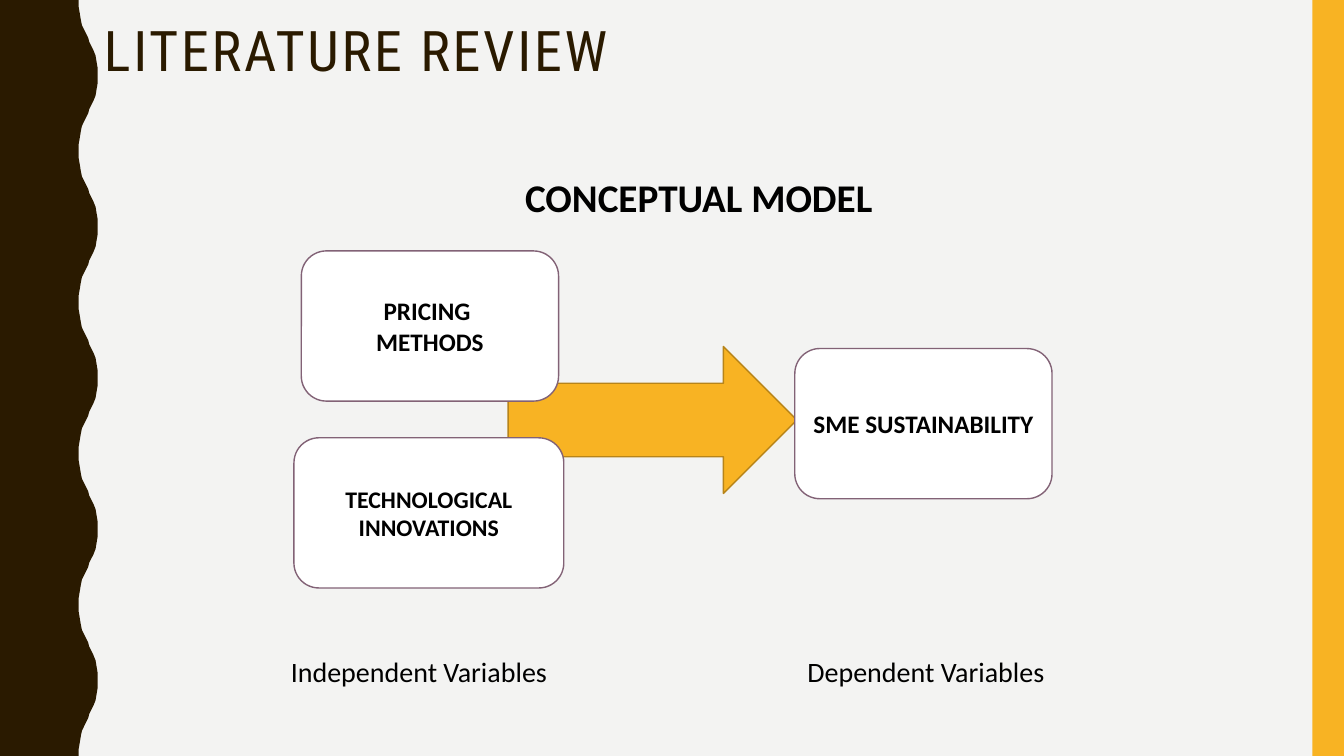
from pptx import Presentation
from pptx.dml.color import RGBColor as RGB
from pptx.enum.shapes import MSO_SHAPE as Shape
from pptx.enum.text import MSO_ANCHOR as Anchor, PP_ALIGN as Align
from pptx.util import Pt

PX = 9525
WIDTH, HEIGHT = 1280, 720
COLORS = {
    "background": "F3F3F2",
    "brown": "2A1A00",
    "amber": "F8B323",
    "amber_edge": "B7841A",
    "white": "FFFFFF",
    "mauve": "826276",
    "black": "000000",
}
HALF_WAVE = [(75, 0), (75, 7), (76, 13), (77, 19), (78, 24), (80, 28), (82, 32), (84, 36),
             (85, 40), (87, 44), (89, 48), (91, 53), (92, 59), (93, 65), (93, 72)]


def color(name):
    """Return the named colour."""
    return RGB.from_string(COLORS[name])


def write(frame, text, size, font="Calibri", ink="black", bold=False, align=Align.LEFT,
          anchor=Anchor.TOP, inset=0, leading=1.0, tracking=0):
    """Fill a text frame with one paragraph per line of text."""
    frame.word_wrap = True
    frame.vertical_anchor = anchor
    frame.margin_left = frame.margin_right = inset * PX
    frame.margin_top = frame.margin_bottom = inset // 2 * PX
    for index, line in enumerate(text.split("\n")):
        paragraph = frame.add_paragraph() if index else frame.paragraphs[0]
        paragraph.alignment = align
        paragraph.line_spacing = leading
        run = paragraph.add_run()
        run.text = line
        run.font.name, run.font.size, run.font.bold = font, Pt(size), bold
        run.font.color.rgb = color(ink)
        if tracking:
            run._r.get_or_add_rPr().set("spc", str(tracking * 100))


def label(slide, box, text, size, **style):
    """Place a text box."""
    frame = slide.shapes.add_textbox(*(n * PX for n in box)).text_frame
    write(frame, text, size, **style)


def paint(shape, fill, edge=None):
    """Give a shape its fill and outline, without shadow."""
    shape.shadow.inherit = False
    shape.fill.solid()
    shape.fill.fore_color.rgb = color(fill)
    if edge:
        shape.line.color.rgb = color(edge)
        shape.line.width = Pt(1)
    else:
        shape.line.fill.background()


def block(slide, kind, box, fill, edge=None):
    """Place a painted preset shape."""
    shape = slide.shapes.add_shape(kind, *(n * PX for n in box))
    paint(shape, fill, edge)
    return shape


def side_bands(slide, width, height):
    """Draw the wavy left band and the straight right band."""
    half = HALF_WAVE[-1][1]
    edge = []
    for top in range(0, height, 2 * half):
        edge += [(x, top + y) for x, y in HALF_WAVE]
        edge += [(x, top + 2 * half - y) for x, y in reversed(HALF_WAVE[:-1])]
    wave = slide.shapes.build_freeform(0, 0, scale=PX)
    wave.add_line_segments(edge + [(0, height)], close=True)
    paint(wave.convert_to_shape(), "brown")
    block(slide, Shape.RECTANGLE, (width - 30, 0, 30, height), "amber")


def variable(slide, box, text, size=18):
    """Draw one rounded box of the model."""
    shape = block(slide, Shape.ROUNDED_RECTANGLE, box, "white", "mauve")
    write(shape.text_frame, text, size, bold=True, align=Align.CENTER,
          anchor=Anchor.MIDDLE, inset=8)


def conceptual_model(slide, left, top, width):
    """Draw the model: heading, arrow, variables and their captions."""
    label(slide, (left, top, width, 45), "CONCEPTUAL MODEL", 28, bold=True, align=Align.CENTER)
    block(slide, Shape.RIGHT_ARROW, (left + 353, top + 165, 275, 140), "amber", "amber_edge")
    variable(slide, (left + 156, top + 74, 245, 143), "PRICING \nMETHODS")
    variable(slide, (left + 149, top + 252, 257, 143), "TECHNOLOGICAL INNOVATIONS", 17)
    variable(slide, (left + 626, top + 167, 245, 143), "SME SUSTAINABILITY")
    for offset, caption in ((146, "Independent Variables"), (638, "Dependent Variables")):
        label(slide, (left + offset, top + 458, 270, 34), caption, 20)


def main():
    """Build and save the slide."""
    deck = Presentation()
    deck.slide_width, deck.slide_height = WIDTH * PX, HEIGHT * PX
    slide = deck.slides.add_slide(deck.slide_layouts[6])
    slide.background.fill.solid()
    slide.background.fill.fore_color.rgb = color("background")
    side_bands(slide, WIDTH, HEIGHT)
    label(slide, (89, 17, 1069, 79), "LITERATURE REVIEW", 40, font="Roboto Condensed",
          ink="brown", inset=10, leading=0.9, tracking=2)
    conceptual_model(slide, 131, 165, 1069)
    deck.save("out.pptx")


if __name__ == "__main__":
    main()
